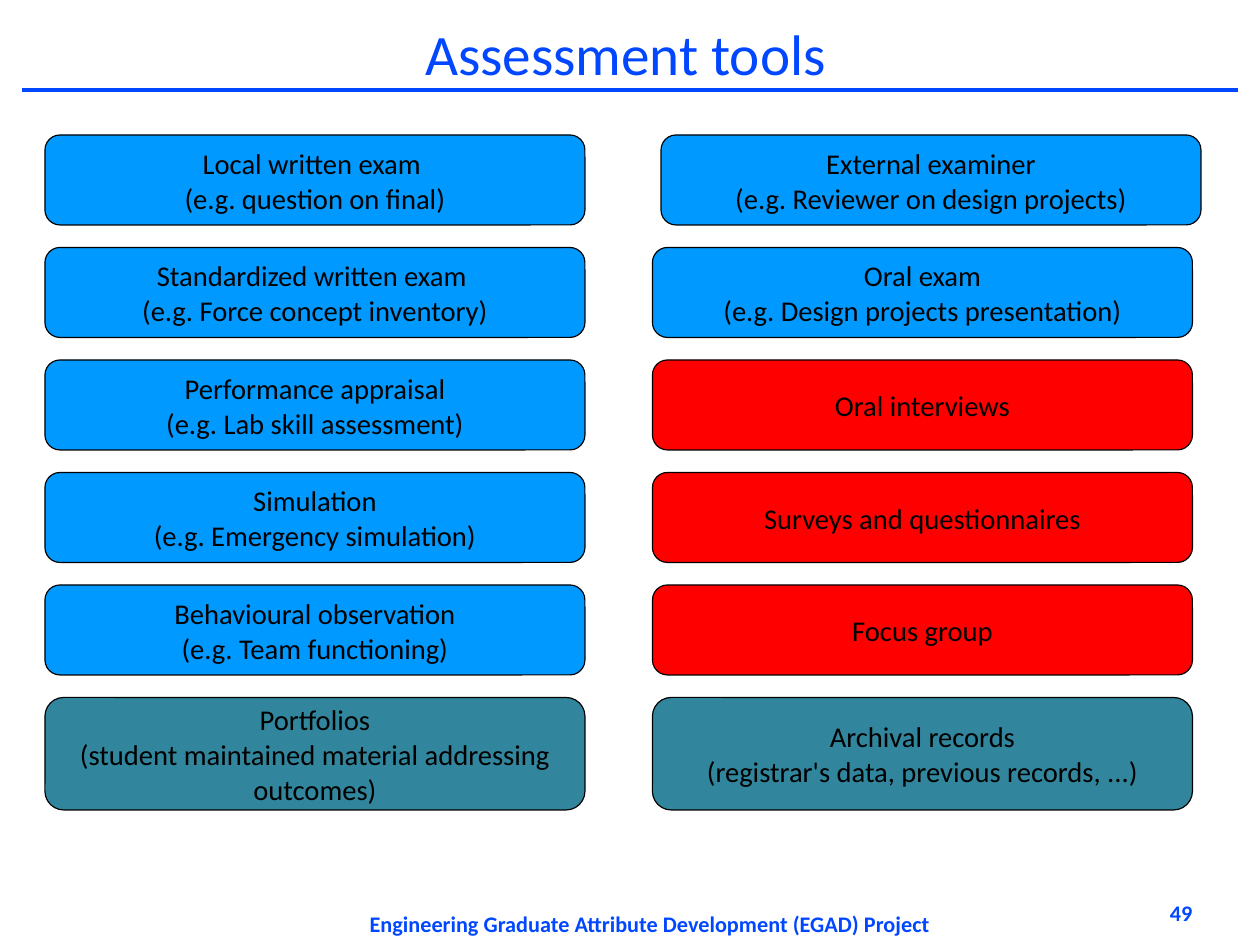
import dataclasses

import pptx
import pptx.dml.color
import pptx.enum.shapes
import pptx.enum.text
import pptx.oxml
import pptx.util
from pptx.util import Cm

ALIGN = pptx.enum.text.PP_ALIGN
ANCHOR = pptx.enum.text.MSO_ANCHOR


@dataclasses.dataclass(frozen=True)
class Theme:
    font: str = "Calibri"
    accent: str = "0047FF"
    ink: str = "000000"
    direct: str = "0099FF"
    indirect: str = "FF0000"
    records: str = "31859C"
    title_size: float = 36
    tool_size: float = 18
    footer_size: float = 14
    rule_width: float = 2.83
    outline_width: float = 0.75


THEME = Theme()

# Layout of the tool grid, in centimetres
COLUMN_LEFTS = (1, 14.5)
FIRST_TOP, ROW_PITCH = 3, 2.5
TOOL_WIDTH, TOOL_HEIGHT, RECORDS_HEIGHT = 12, 2, 2.5
EXAMINER_SHIFT = 0.19

# Each column holds (lines, fill colour) from top to bottom
TOOL_COLUMNS = (
    (
        ("Local written exam \n(e.g. question on final)", THEME.direct),
        ("Standardized written exam \n(e.g. Force concept inventory)", THEME.direct),
        ("Performance appraisal\n(e.g. Lab skill assessment)", THEME.direct),
        ("Simulation\n(e.g. Emergency simulation)", THEME.direct),
        ("Behavioural observation\n(e.g. Team functioning)", THEME.direct),
        ("Portfolios\n(student maintained material addressing\noutcomes)", THEME.records),
    ),
    (
        ("External examiner\n(e.g. Reviewer on design projects)", THEME.direct),
        ("Oral exam\n(e.g. Design projects presentation)", THEME.direct),
        ("Oral interviews", THEME.indirect),
        ("Surveys and questionnaires", THEME.indirect),
        ("Focus group", THEME.indirect),
        ("Archival records\n(registrar's data, previous records, ...)", THEME.records),
    ),
)


def rgb(colour):
    return pptx.dml.color.RGBColor.from_string(colour)


def write(frame, text, size, colour, align=ALIGN.CENTER, bold=False, spacing=1.0):
    frame.text = text
    for paragraph in frame.paragraphs:
        paragraph.alignment = align
        paragraph.line_spacing = spacing
        for run in paragraph.runs:
            run.font.name = THEME.font
            run.font.size = pptx.util.Pt(size)
            run.font.bold = bold
            run.font.color.rgb = rgb(colour)


def add_label(slide, text, box, size, anchor=ANCHOR.TOP, **style):
    label = slide.shapes.add_textbox(*map(Cm, box)).text_frame
    label.word_wrap = True
    label.vertical_anchor = anchor
    label.margin_left = label.margin_right = 0
    label.margin_top = label.margin_bottom = 0
    write(label, text, size, THEME.accent, **style)


def add_title_rule(slide):
    rule = slide.shapes.add_connector(
        pptx.enum.shapes.MSO_CONNECTOR.STRAIGHT, Cm(0.5), Cm(2), Cm(27.5), Cm(2))
    rule.line.color.rgb = rgb(THEME.accent)
    rule.line.width = pptx.util.Pt(THEME.rule_width)
    properties = rule.element.spPr
    properties.append(properties.makeelement(pptx.oxml.ns.qn("a:effectLst"), {}))


def add_tool(slide, text, fill, left, top, height):
    tool = slide.shapes.add_shape(
        pptx.enum.shapes.MSO_SHAPE.ROUNDED_RECTANGLE,
        Cm(left), Cm(top), Cm(TOOL_WIDTH), Cm(height))
    tool.shadow.inherit = False
    tool.fill.solid()
    tool.fill.fore_color.rgb = rgb(fill)
    tool.line.color.rgb = rgb(THEME.ink)
    tool.line.width = pptx.util.Pt(THEME.outline_width)
    tool.text_frame.word_wrap = False
    tool.text_frame.vertical_anchor = ANCHOR.MIDDLE
    write(tool.text_frame, text, THEME.tool_size, THEME.ink, spacing=1.02)


def add_tool_grid(slide):
    for column, (left, tools) in enumerate(zip(COLUMN_LEFTS, TOOL_COLUMNS)):
        for row, (text, fill) in enumerate(tools):
            # The external examiner box sits slightly right of its column
            shift = EXAMINER_SHIFT if (column, row) == (1, 0) else 0
            height = RECORDS_HEIGHT if fill == THEME.records else TOOL_HEIGHT
            add_tool(slide, text, fill, left + shift,
                     FIRST_TOP + row * ROW_PITCH, height)


def main():
    deck = pptx.Presentation()
    deck.slide_width, deck.slide_height = Cm(28), Cm(21)
    slide = deck.slides.add_slide(deck.slide_layouts[6])

    # Heading
    add_title_rule(slide)
    add_label(slide, "Assessment tools", (1.3, 0.33, 25.2, 1.65),
              THEME.title_size, anchor=ANCHOR.MIDDLE, spacing=1.02)

    # Assessment tools
    add_tool_grid(slide)

    # Footer
    add_label(slide, "Engineering Graduate Attribute Development (EGAD) Project",
              (7.8, 20.24, 13.28, 0.76), THEME.footer_size, bold=True)
    add_label(slide, "49", (21.2, 19.99, 5.3, 1), THEME.footer_size,
              align=ALIGN.RIGHT, bold=True)

    deck.save("out.pptx")


if __name__ == "__main__":
    main()
